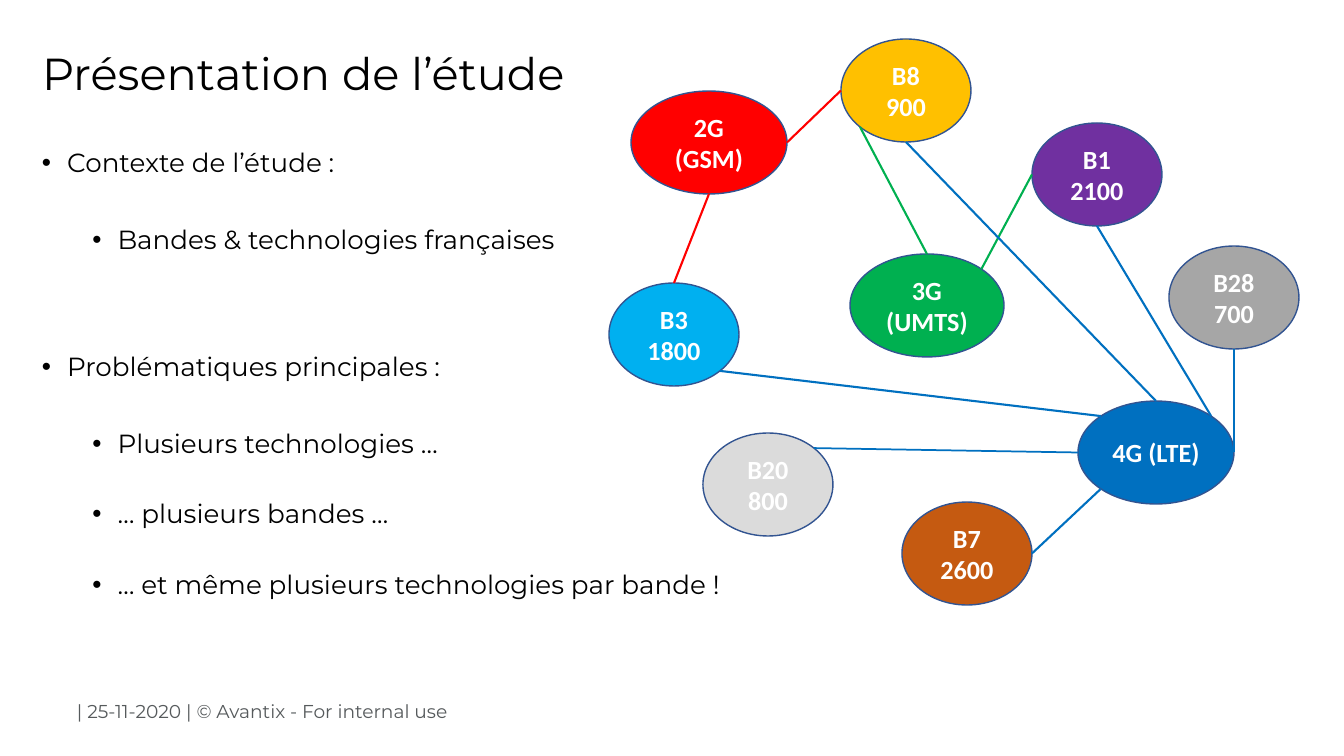
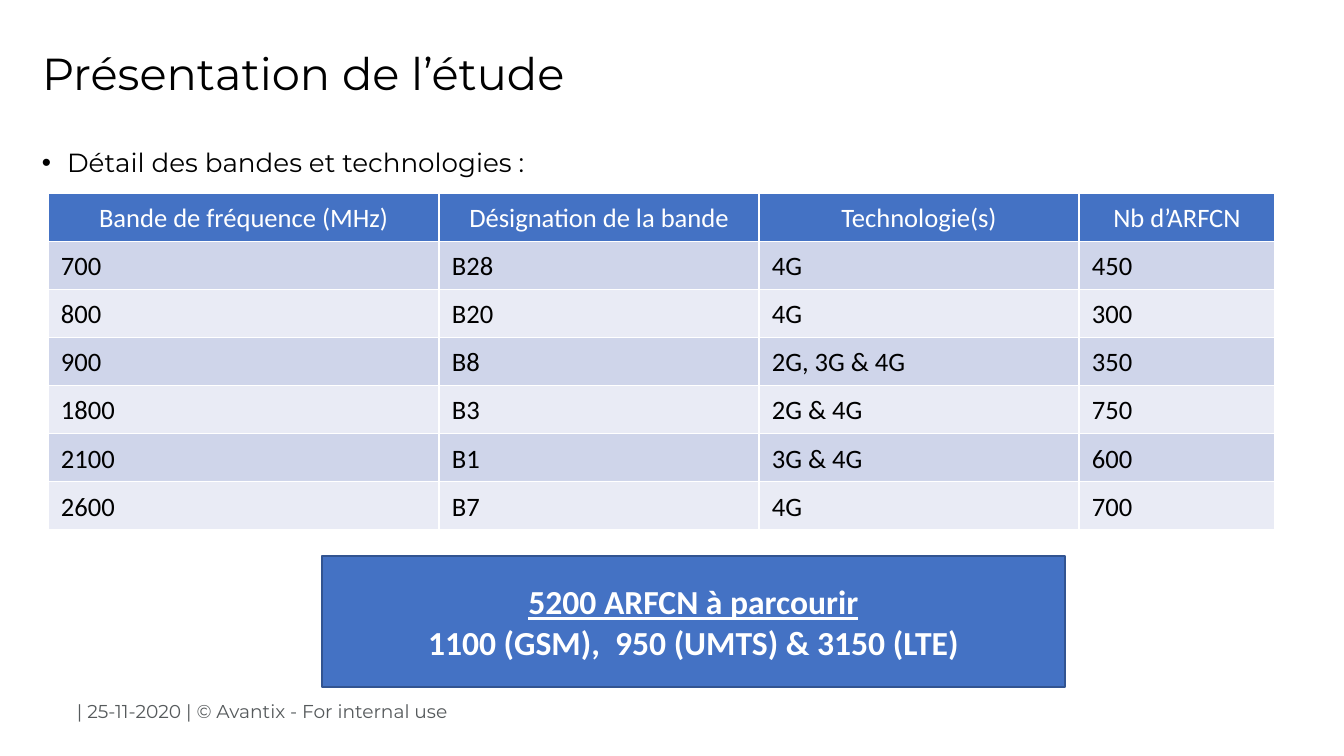
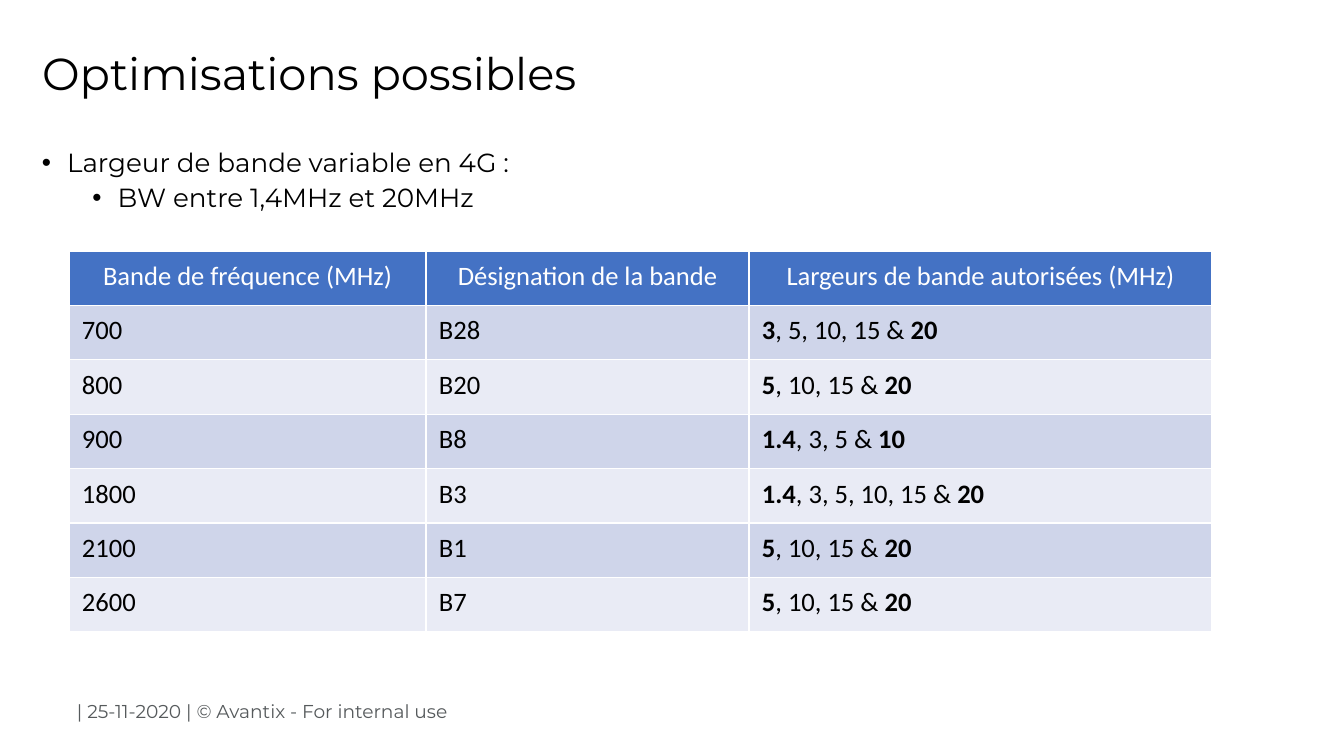
import math

from lxml import etree
from pptx import Presentation, util as u
from pptx.dml.color import RGBColor
from pptx.enum import shapes, text
from pptx.oxml.ns import qn

# Shared style
EMU_PER_PX = 914400 / 100.8
HEADING_FONT, SHAPE_FONT = "Montserrat", "Calibri"
BLACK, WHITE, GREY = "000000", "FFFFFF", "565A5C"
BLUE, OUTLINE = "4472C4", "325491"
ROW_FILLS = ("E9EBF5", "CFD5EA")
FOOTER = "| 25-11-2020 | © Avantix - For internal use"
STUDY_TITLE = "Présentation de l’étude"

# Bullets: level, space before in points, text
STUDY_BULLETS = [
    (0, 0, "Contexte de l’étude :"),
    (1, 35, "Bandes & technologies françaises"),
    (0, 70, "Problématiques principales :"),
    (1, 35, "Plusieurs technologies …"),
    (1, 30, "… plusieurs bandes …"),
    (1, 30, "… et même plusieurs technologies par bande !"),
]
DETAIL_BULLETS = [(0, 0, "Détail des bandes et technologies :")]
WIDTH_BULLETS = [
    (0, 0, "Largeur de bande variable en 4G :"),
    (1, 5, "BW entre 1,4MHz et 20MHz"),
]

# Network: name -> (left, top, width, fill, text lines)
NODE_HEIGHT = 103
NODES = {
    "2G": (631, 91, 156, "FF0000", ("2G", "(GSM)")),
    "3G": (850, 254, 154, "00B050", ("3G", "(UMTS)")),
    "4G": (1078, 401, 156, "0070C0", ("4G (LTE)",)),
    "B8": (841, 39, 130, "FFC000", ("B8", "900")),
    "B3": (609, 283, 130, "00B0F0", ("B3", "1800")),
    "B1": (1032, 123, 130, "7030A0", ("B1", "2100")),
    "B28": (1169, 246, 130, "A6A6A6", ("B28", "700")),
    "B7": (902, 502, 130, "C55A11", ("B7", "2600")),
    "B20": (703, 433, 130, "DBDBDB", ("B20", "800")),
}
# Technology, angle on its ellipse, band, angle, line width
LINKS = [
    ("2G", 90, "B3", 270, 1.5),
    ("2G", 0, "B8", 180, 1.5),
    ("3G", 315, "B1", 180, 1.5),
    ("3G", 270, "B8", 135, 1.5),
    ("4G", 270, "B8", 90, 1.5),
    ("4G", 225, "B3", 45, 1.5),
    ("4G", 180, "B20", 315, 1.25),
    ("4G", 315, "B1", 90, 1.5),
    ("4G", 0, "B28", 90, 1.5),
    ("4G", 135, "B7", 0, 1.5),
]

# Tables: a tuple cell alternates bold and regular runs
BANDS = [("700", "B28"), ("800", "B20"), ("900", "B8"),
         ("1800", "B3"), ("2100", "B1"), ("2600", "B7")]
BAND_HEADS = ("Bande de fréquence (MHz)", "Désignation de la bande")
DETAIL_HEADS = BAND_HEADS + ("Technologie(s)", "Nb d’ARFCN")
DETAILS = [("4G", "450"), ("4G", "300"), ("2G, 3G & 4G", "350"),
           ("2G & 4G", "750"), ("3G & 4G", "600"), ("4G", "700")]
WIDTH_HEADS = BAND_HEADS + ("Largeurs de bande autorisées (MHz)",)
WIDTHS = [
    ("3", ", 5, 10, 15 & ", "20"),
    ("5", ", 10, 15 & ", "20"),
    ("1.4", ", 3, 5 & ", "10"),
    ("1.4", ", 3, 5, 10, 15 & ", "20"),
    ("5", ", 10, 15 & ", "20"),
    ("5", ", 10, 15 & ", "20"),
]
TOTALS = [("5200 ARFCN à parcourir", True),
          ("1100 (GSM),  950 (UMTS) & 3150 (LTE)", False)]


def px(length):
    return u.Emu(round(length * EMU_PER_PX))


def color(value):
    return RGBColor.from_string(value)


def add_run(paragraph, words, size, font, ink, bold=False, underline=False):
    run = paragraph.add_run()
    run.text = words
    run.font.size, run.font.name = u.Pt(size), font
    run.font.bold, run.font.underline = bold, underline
    run.font.color.rgb = color(ink)


def next_paragraph(frame, index):
    return frame.add_paragraph() if index else frame.paragraphs[0]


def add_text_frame(slide, *box):
    frame = slide.shapes.add_textbox(*map(px, box)).text_frame
    frame.word_wrap = True
    return frame


def add_footer(slide):
    """Write the footer and move it to the layout, so every slide shows it."""
    box = slide.shapes.add_textbox(*map(px, (67, 695, 420, 33)))
    box.text_frame.word_wrap = True
    add_run(box.text_frame.paragraphs[0], FOOTER, 13.3, HEADING_FONT, GREY)
    slide.slide_layout.shapes._spTree.append(box._element)


def add_slide(presentation, title):
    slide = presentation.slides.add_slide(presentation.slide_layouts[5])
    shape = slide.shapes.title
    shape.left, shape.top, shape.width, shape.height = map(px, (32, 18, 1286, 116))
    frame = shape.text_frame
    frame.vertical_anchor = text.MSO_ANCHOR.MIDDLE
    frame.auto_size = text.MSO_AUTO_SIZE.NONE
    paragraph = frame.paragraphs[0]
    paragraph.alignment = text.PP_ALIGN.LEFT
    paragraph.line_spacing = 0.9
    add_run(paragraph, title, 32, HEADING_FONT, BLACK)
    return slide


def add_bullets(slide, bullets, width, height):
    frame = add_text_frame(slide, 32, 145, width, height)
    for index, (level, space, words) in enumerate(bullets):
        paragraph = next_paragraph(frame, index)
        paragraph.level = level
        properties = paragraph._p.get_or_add_pPr()
        properties.set("marL", str(u.Inches(0.25 + 0.5 * level)))
        properties.set("indent", str(u.Inches(-0.25)))
        etree.SubElement(properties, qn("a:buFont")).set("typeface", "Arial")
        etree.SubElement(properties, qn("a:buChar")).set("char", "•")
        paragraph.line_spacing = 0.9
        if space:
            paragraph.space_before = u.Pt(space)
        add_run(paragraph, words, 18.7, HEADING_FONT, BLACK)


def add_filled_shape(slide, kind, box, fill):
    shape = slide.shapes.add_shape(kind, *map(px, box))
    shape.shadow.inherit = False
    shape.fill.solid()
    shape.fill.fore_color.rgb = color(fill)
    shape.line.color.rgb = color(OUTLINE)
    shape.line.width = u.Pt(1)
    shape.text_frame.word_wrap = True
    shape.text_frame.vertical_anchor = text.MSO_ANCHOR.MIDDLE
    return shape.text_frame


def add_node(slide, left, top, width, fill, lines):
    frame = add_filled_shape(slide, shapes.MSO_SHAPE.OVAL,
                             (left, top, width, NODE_HEIGHT), fill)
    paragraph = frame.paragraphs[0]
    paragraph.alignment = text.PP_ALIGN.CENTER
    for index, words in enumerate(lines):
        if index:
            paragraph.add_line_break()
        add_run(paragraph, words, 18.7, SHAPE_FONT, WHITE, bold=True)


def rim_point(name, angle):
    """Point on a node's ellipse, clockwise from its right end."""
    left, top, width = NODES[name][:3]
    turn = math.radians(angle)
    return (px(left + width / 2 * (1 + math.cos(turn))),
            px(top + NODE_HEIGHT / 2 * (1 + math.sin(turn))))


def add_link(slide, technology, start_angle, band, end_angle, weight):
    link = slide.shapes.add_connector(
        shapes.MSO_CONNECTOR.STRAIGHT,
        *rim_point(technology, start_angle), *rim_point(band, end_angle))
    link.line.color.rgb = color(NODES[technology][3])
    link.line.width = u.Pt(weight)
    etree.SubElement(link._element.spPr, qn("a:effectLst"))


def style_cell(cell, fill):
    cell.margin_left = cell.margin_right = px(13)
    cell.margin_top = cell.margin_bottom = px(7)
    properties = cell._tc.get_or_add_tcPr()
    for side in ("lnL", "lnR", "lnT", "lnB"):
        border = etree.SubElement(properties, qn("a:" + side), w=str(u.Pt(1)))
        paint = etree.SubElement(border, qn("a:solidFill"))
        etree.SubElement(paint, qn("a:srgbClr"), val=WHITE)
    cell.fill.solid()
    cell.fill.fore_color.rgb = color(fill)


def add_band_table(slide, left, top, height, columns, heads, details):
    rows = [heads] + [band + detail for band, detail in zip(BANDS, details)]
    table = slide.shapes.add_table(
        len(rows), len(columns), px(left), px(top),
        px(sum(columns)), px(height)).table
    for column, width in zip(table.columns, columns):
        column.width = px(width)
    for row_index, row in enumerate(rows):
        table.rows[row_index].height = px(height / len(rows))
        header = row_index == 0
        for column_index, content in enumerate(row):
            cell = table.cell(row_index, column_index)
            style_cell(cell, BLUE if header else ROW_FILLS[row_index % 2])
            paragraph = cell.text_frame.paragraphs[0]
            paragraph.alignment = (text.PP_ALIGN.CENTER if header
                                   else text.PP_ALIGN.JUSTIFY)
            paragraph.line_spacing = 1.07
            paragraph.space_after = u.Pt(8)
            mixed = isinstance(content, tuple)
            for run_index, words in enumerate(content if mixed else (content,)):
                add_run(paragraph, words, 19, SHAPE_FONT,
                        WHITE if header else BLACK,
                        bold=mixed and run_index % 2 == 0)


def main():
    presentation = Presentation()
    presentation.slide_width, presentation.slide_height = px(1344), px(756)

    # Study: bands and technologies network
    slide = add_slide(presentation, STUDY_TITLE)
    add_footer(slide)
    add_bullets(slide, STUDY_BULLETS, 767, 571)
    for node in NODES.values():
        add_node(slide, *node)
    for link in LINKS:
        add_link(slide, *link)

    # Study: table of bands and total
    slide = add_slide(presentation, STUDY_TITLE)
    add_bullets(slide, DETAIL_BULLETS, 767, 571)
    add_band_table(slide, 48, 193, 331, (391, 320, 320, 196),
                   DETAIL_HEADS, DETAILS)
    frame = add_filled_shape(slide, shapes.MSO_SHAPE.RECTANGLE,
                             (322, 556, 743, 131), BLUE)
    for index, (words, underline) in enumerate(TOTALS):
        paragraph = next_paragraph(frame, index)
        paragraph.alignment = text.PP_ALIGN.CENTER
        add_run(paragraph, words, 24, SHAPE_FONT, WHITE, True, underline)

    # Optimisations: allowed bandwidths
    slide = add_slide(presentation, "Optimisations possibles")
    add_bullets(slide, WIDTH_BULLETS, 1286, 296)
    add_band_table(slide, 69, 251, 381, (357, 323, 463), WIDTH_HEADS,
                   [(widths,) for widths in WIDTHS])

    presentation.save("out.pptx")


if __name__ == "__main__":
    main()
